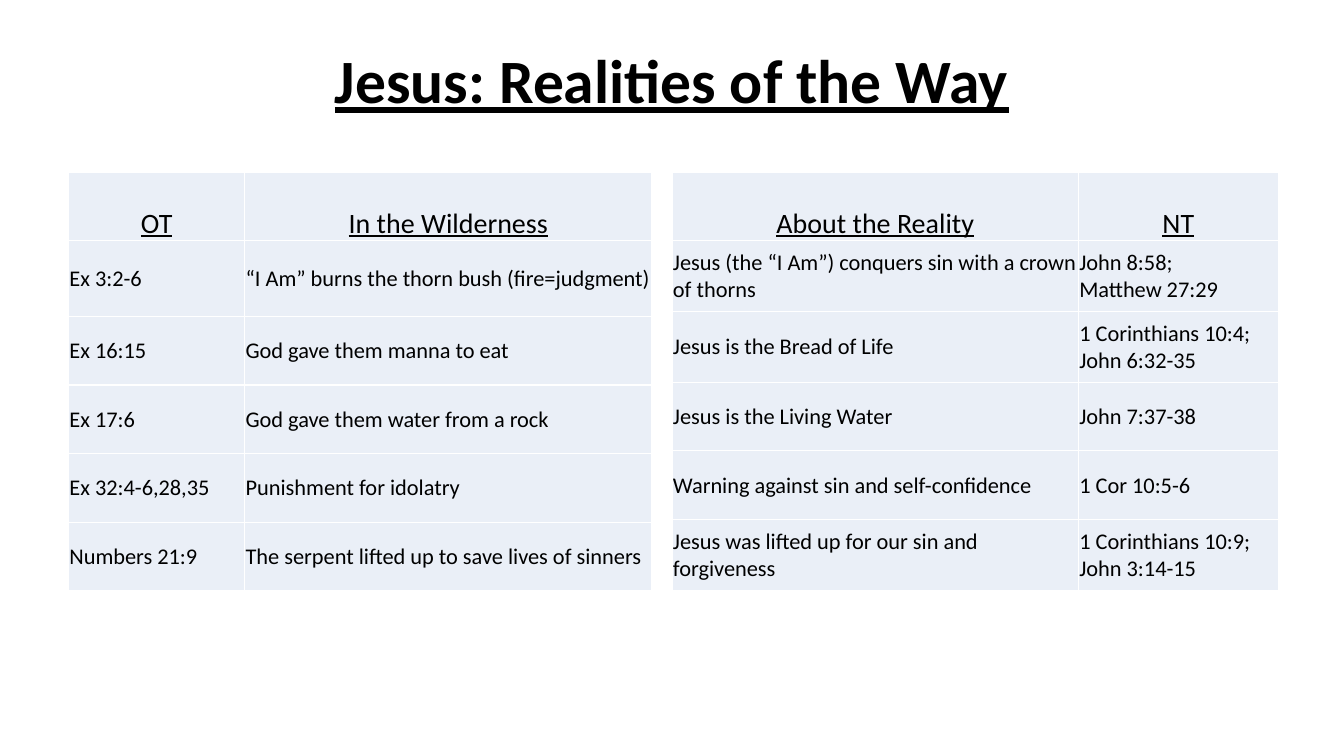
from dataclasses import dataclass

from lxml import etree
from pptx import Presentation
from pptx.dml.color import RGBColor
from pptx.enum.text import MSO_ANCHOR, PP_ALIGN
from pptx.oxml.ns import qn
from pptx.slide import Slide
from pptx.table import _Cell
from pptx.text.text import _Paragraph
from pptx.util import Cm, Pt

BLACK = RGBColor(0x00, 0x00, 0x00)
WHITE = RGBColor(0xFF, 0xFF, 0xFF)
PALE = RGBColor(0xEA, 0xEF, 0xF7)
CENTER, LEFT = PP_ALIGN.CENTER, PP_ALIGN.LEFT
BOTTOM, MIDDLE = MSO_ANCHOR.BOTTOM, MSO_ANCHOR.MIDDLE

TITLE = {"size": Pt(44), "bold": True, "underline": True}
HEAD = {"size": Pt(20), "bold": False, "underline": True}
BODY = {"size": Pt(16), "bold": False, "underline": False}
INSET = {"margin_left": Cm(0.02), "margin_right": Cm(0.02),
         "margin_top": Cm(0.02), "margin_bottom": Cm(0)}
TOP = 4.34


@dataclass
class Grid:
    """A two-column table; lengths in centimetres, first row is the heading."""
    left: float
    cols: list[float]
    rows: list[float]
    text: list[tuple[str, str]]


GRIDS = [
    Grid(1.73, [4.44, 10.26], [1.73, 1.9, 1.73, 1.73, 1.73, 1.73], [
        ("OT", "In the Wilderness"),
        ("Ex 3:2-6", "“I Am” burns the thorn bush (fire=judgment)"),
        ("Ex 16:15", "God gave them manna to eat"),
        ("Ex 17:6", "God gave them water from a rock"),
        ("Ex 32:4-6,28,35", "Punishment for idolatry"),
        ("Numbers 21:9", "The serpent lifted up to save lives of sinners"),
    ]),
    Grid(16.94, [10.24, 5.03], [1.73, 1.78, 1.78, 1.73, 1.73, 1.78], [
        ("About the Reality", "NT"),
        ("Jesus (the “I Am”) conquers sin with a crown of thorns",
         "John 8:58;\vMatthew 27:29"),
        ("Jesus is the Bread of Life", "1 Corinthians 10:4; John 6:32-35"),
        ("Jesus is the Living Water", "John 7:37-38"),
        ("Warning against sin and self-confidence", "1 Cor 10:5-6"),
        ("Jesus was lifted up for our sin and forgiveness",
         "1 Corinthians 10:9; John 3:14-15"),
    ]),
]


def write(para: _Paragraph, text: str, look: dict, align: PP_ALIGN) -> None:
    para.text = text
    para.alignment = align
    for run in para.runs:
        run.font.name = "Calibri"
        run.font.color.rgb = BLACK
        for name, value in look.items():
            setattr(run.font, name, value)


def edge(cell: _Cell) -> None:
    """Give all four sides of a cell a thin white border."""
    props = cell._tc.get_or_add_tcPr()
    for side in ("lnL", "lnR", "lnT", "lnB"):
        line = etree.SubElement(props, qn(f"a:{side}"), w=str(Pt(1)))
        fill = etree.SubElement(line, qn("a:solidFill"))
        etree.SubElement(fill, qn("a:srgbClr"), val=str(WHITE))


def draw_cell(cell: _Cell, text: str, head: bool) -> None:
    edge(cell)
    cell.fill.solid()
    cell.fill.fore_color.rgb = PALE
    for name, value in INSET.items():
        setattr(cell, name, value)
    cell.vertical_anchor = BOTTOM if head else MIDDLE
    write(cell.text_frame.paragraphs[0], text,
          HEAD if head else BODY, CENTER if head else LEFT)


def draw_grid(slide: Slide, grid: Grid) -> None:
    table = slide.shapes.add_table(
        len(grid.rows), len(grid.cols), Cm(grid.left), Cm(TOP),
        Cm(sum(grid.cols)), Cm(sum(grid.rows))).table
    table.first_row = table.horz_banding = False
    for col, width in zip(table.columns, grid.cols):
        col.width = Cm(width)
    for row, height in zip(table.rows, grid.rows):
        row.height = Cm(height)
    for r, line in enumerate(grid.text):
        for c, text in enumerate(line):
            draw_cell(table.cell(r, c), text, r == 0)


def draw_title(slide: Slide, text: str) -> None:
    box = slide.shapes.add_textbox(Cm(2.33), Cm(0.79), Cm(29.21), Cm(2.64))
    frame = box.text_frame
    frame.word_wrap = True
    frame.vertical_anchor = MIDDLE
    para = frame.paragraphs[0]
    para.line_spacing = 0.9
    write(para, text, TITLE, CENTER)


def main() -> None:
    deck = Presentation()
    deck.slide_width, deck.slide_height = Cm(33.87), Cm(19.05)
    slide = deck.slides.add_slide(deck.slide_layouts[6])
    draw_title(slide, "Jesus: Realities of the Way")
    for grid in GRIDS:
        draw_grid(slide, grid)
    deck.save("out.pptx")


if __name__ == "__main__":
    main()
